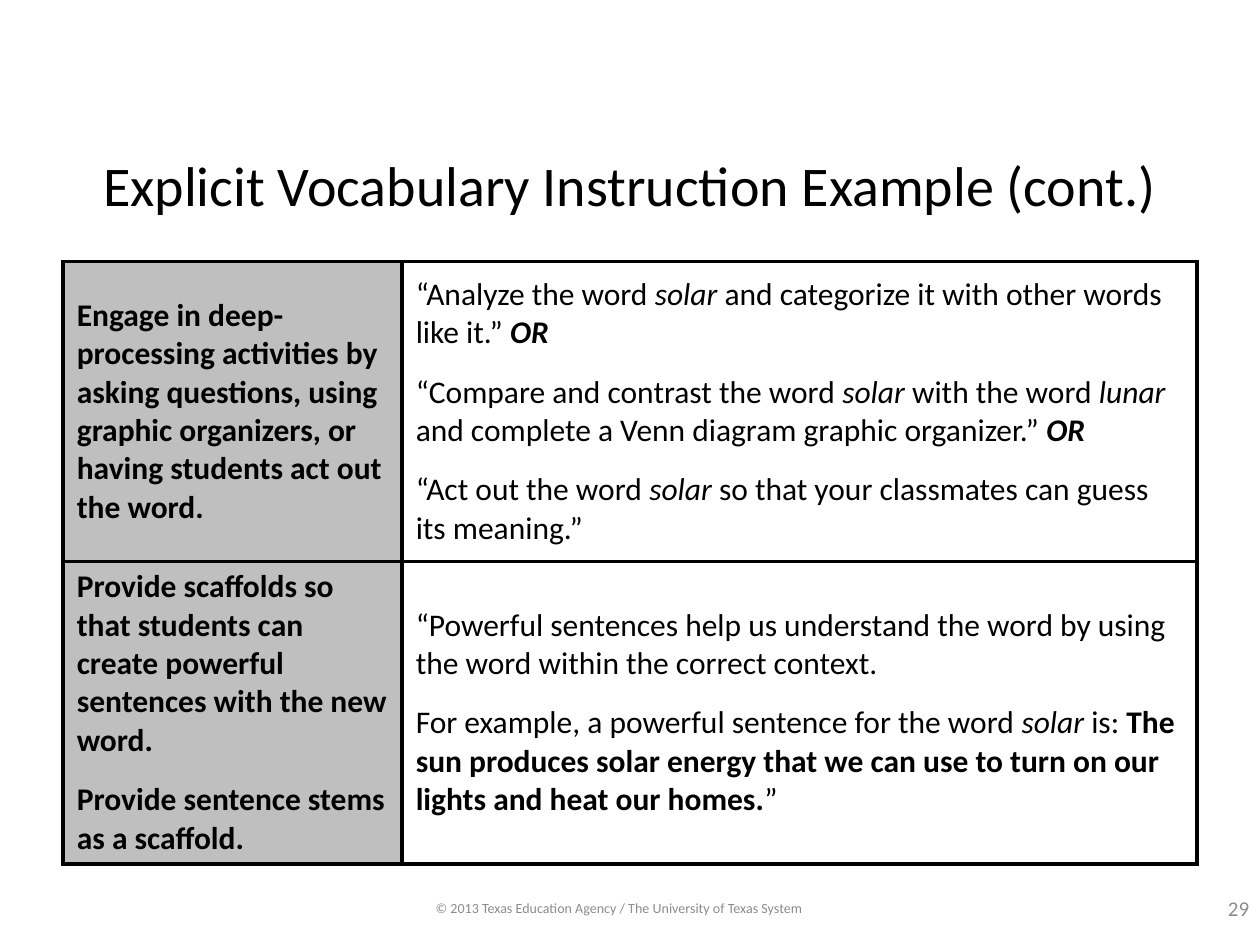
"""Build a vocabulary instruction slide with a two-by-two example table."""
from dataclasses import dataclass

from lxml import etree
from pptx import Presentation
from pptx import util as u
from pptx.dml.color import RGBColor
from pptx.enum import text
from pptx.oxml.ns import qn

WIDTH, HEIGHT = 10, 7.5
FONT, BLACK, GREY, SHADE = "Calibri", "000000", "8C8C8C", "BFBFBF"
COLUMN_SHARES = (0.269, 0.631)
ROW_SHARE = 0.317
BORDER = 2.25


@dataclass(frozen=True)
class Span:
    """A stretch of text in one style."""
    words: str
    bold: bool = False
    italic: bool = False


@dataclass(frozen=True)
class Label:
    """A centred line of text placed by shares of the slide."""
    words: str
    left: float
    top: float
    width: float
    height: float
    size: float
    color: str


@dataclass(frozen=True)
class Step:
    """A table row: bold headings and the teacher's example wording."""
    headings: tuple[str, ...]
    examples: tuple[tuple[Span, ...], ...]


SOLAR = Span("solar ", italic=True)
OR = Span("OR", bold=True, italic=True)

LABELS = (
    Label("Explicit Vocabulary Instruction Example (cont.)",
          0.05, 0.139, 0.9, 0.112, 32, BLACK),
    Label("© 2013 Texas Education Agency / The University of Texas System",
          0.208, 0.944, 0.567, 0.033, 8, GREY),
    Label("29", 0.958, 0.943, 0.05, 0.036, 12, GREY),
)

STEPS = (
    Step(
        ("Engage in deep- processing activities by asking questions, using "
         "graphic organizers, or having students act out the word.",),
        (
            (Span("“Analyze the word "), SOLAR,
             Span("and categorize it with other words like it.” "), OR),
            (Span("“Compare and contrast the word "), SOLAR,
             Span("with the word "), Span("lunar ", italic=True),
             Span("and complete a Venn diagram graphic organizer.” "), OR),
            (Span("“Act out the word "), SOLAR,
             Span("so that your classmates can guess its meaning.”")),
        ),
    ),
    Step(
        ("Provide scaffolds so that students can create powerful sentences "
         "with the new word.",
         "Provide sentence stems as a scaffold."),
        (
            (Span("“Powerful sentences help us understand the word by using "
                  "the word within the correct context."),),
            (Span("For example, a powerful sentence for the word "), SOLAR,
             Span("is: "),
             Span("The sun produces solar energy that we can use to turn on "
                  "our lights and heat our homes.", bold=True),
             Span("”")),
        ),
    ),
)


def across(share: float) -> u.Emu:
    """Turn a share of the slide's width into a length."""
    return u.Inches(WIDTH * share)


def down(share: float) -> u.Emu:
    """Turn a share of the slide's height into a length."""
    return u.Inches(HEIGHT * share)


def paint(target, color: str) -> None:
    """Give a colour format or a fill a hex colour."""
    if hasattr(target, "solid"):
        target.solid()
        target = target.fore_color
    target.rgb = RGBColor.from_string(color)


def add_span(para, span: Span, size: float, color: str) -> None:
    """Append one styled run to a paragraph."""
    run = para.add_run()
    run.text = span.words
    run.font.name, run.font.size = FONT, u.Pt(size)
    run.font.bold, run.font.italic = span.bold, span.italic
    paint(run.font.color, color)


def add_label(page, label: Label) -> None:
    """Draw a centred text box."""
    box = page.shapes.add_textbox(across(label.left), down(label.top),
                                  across(label.width), down(label.height))
    frame = box.text_frame
    frame.word_wrap = True
    frame.vertical_anchor = text.MSO_ANCHOR.MIDDLE
    para = frame.paragraphs[0]
    para.alignment = text.PP_ALIGN.CENTER
    add_span(para, Span(label.words), label.size, label.color)


def add_borders(cell) -> None:
    """Outline all four sides of a cell."""
    properties = cell._tc.get_or_add_tcPr()
    for position, side in enumerate(("a:lnL", "a:lnR", "a:lnT", "a:lnB")):
        line = etree.Element(qn(side), w=str(u.Pt(BORDER)))
        fill = etree.SubElement(line, qn("a:solidFill"))
        etree.SubElement(fill, qn("a:srgbClr"), val=BLACK)
        properties.insert(position, line)


def fill_cell(cell, paragraphs: tuple[tuple[Span, ...], ...], shade: str | None) -> None:
    """Write a cell's paragraphs and set its look."""
    cell.vertical_anchor = text.MSO_ANCHOR.MIDDLE
    cell.margin_left = cell.margin_right = u.Inches(0.11)
    cell.margin_top = cell.margin_bottom = u.Inches(0.05)
    if shade:
        paint(cell.fill, shade)
    else:
        cell.fill.background()
    add_borders(cell)
    frame = cell.text_frame
    for index, spans in enumerate(paragraphs):
        para = frame.add_paragraph() if index else frame.paragraphs[0]
        para.space_after = u.Pt(12)
        for span in spans:
            add_span(para, span, 18, BLACK)


def add_steps(page, steps: tuple[Step, ...]) -> None:
    """Draw the table of teaching steps."""
    table = page.shapes.add_table(
        len(steps), len(COLUMN_SHARES), across(0.05), down(0.277),
        across(sum(COLUMN_SHARES)), down(ROW_SHARE * len(steps))).table
    table.first_row = table.horz_banding = False
    for column, share in zip(table.columns, COLUMN_SHARES):
        column.width = across(share)
    for index, step in enumerate(steps):
        table.rows[index].height = down(ROW_SHARE)
        headings = tuple((Span(words, bold=True),) for words in step.headings)
        fill_cell(table.cell(index, 0), headings, SHADE)
        fill_cell(table.cell(index, 1), step.examples, None)


def main() -> None:
    """Build and save the deck."""
    deck = Presentation()
    deck.slide_width, deck.slide_height = across(1), down(1)
    page = deck.slides.add_slide(deck.slide_layouts[6])
    paint(page.background.fill, "FFFFFF")
    add_steps(page, STEPS)
    for label in LABELS:
        add_label(page, label)
    deck.save("out.pptx")


if __name__ == "__main__":
    main()
